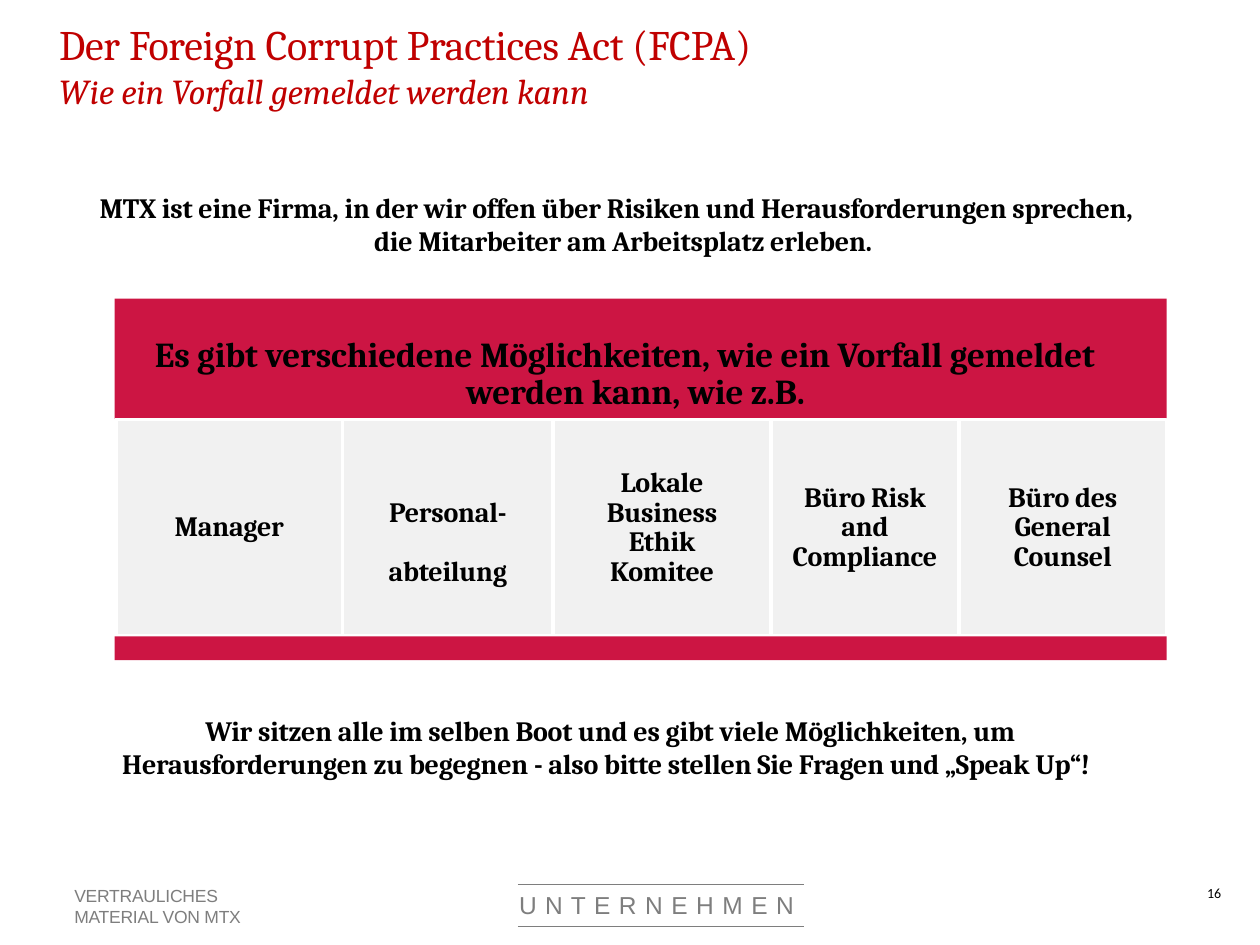
from dataclasses import dataclass

from pptx import Presentation
from pptx.dml.color import RGBColor
from pptx.enum.shapes import MSO_CONNECTOR, MSO_SHAPE
from pptx.enum.text import MSO_ANCHOR, PP_ALIGN
from pptx.oxml import parse_xml
from pptx.oxml.ns import nsdecls
from pptx.util import Inches, Pt

CENTER = PP_ALIGN.CENTER
MIDDLE = MSO_ANCHOR.MIDDLE
RECTANGLE = MSO_SHAPE.RECTANGLE
STRAIGHT = MSO_CONNECTOR.STRAIGHT


@dataclass(frozen=True)
class Theme:
    """Colours, fonts and type sizes of the slide."""
    title: str = "C00000"
    band: str = "CC1543"
    cell: str = "F1F1F1"
    white: str = "FFFFFF"
    ink: str = "000000"
    muted: str = "7E7E7E"
    serif: str = "Cambria"
    sans: str = "Arial"
    number: str = "Calibri"
    title_size: int = 24
    heading_size: int = 20
    body_size: int = 16
    mark_size: int = 14
    footer_size: int = 10
    number_size: int = 8


THEME = Theme()


def style(paragraph, size, color=THEME.ink, face=THEME.serif, bold=False, italic=False, spacing=-0.1):
    """Format every run of a paragraph."""
    for run in paragraph.runs:
        run.font.name = face
        run.font.size = Pt(size)
        run.font.bold = bold
        run.font.italic = italic
        run.font.color.rgb = RGBColor.from_string(color)
        run._r.get_or_add_rPr().set("spc", str(round(spacing * 100)))


def clear_insets(frame):
    """Remove the inner margins of a text frame and let it wrap."""
    frame.word_wrap = True
    frame.margin_left = frame.margin_right = frame.margin_top = frame.margin_bottom = 0


def add_text(slide, left, top, width, height, text, size, margin=0.01, indent=0, **look):
    """Place one paragraph with a left margin and first-line indent and return it."""
    box = slide.shapes.add_textbox(Inches(left), Inches(top), Inches(width), Inches(height))
    clear_insets(box.text_frame)
    paragraph = box.text_frame.paragraphs[0]
    paragraph.text = text
    properties = paragraph._p.get_or_add_pPr()
    properties.set("marL", str(Inches(margin)))
    properties.set("indent", str(Inches(indent)))
    style(paragraph, size, **look)
    return paragraph


def add_block(slide, left, top, width, height, fill):
    """Draw a plain filled rectangle and return it."""
    block = slide.shapes.add_shape(RECTANGLE, Inches(left), Inches(top), Inches(width), Inches(height))
    block.shadow.inherit = False
    block.fill.solid()
    block.fill.fore_color.rgb = RGBColor.from_string(fill)
    block.line.fill.background()
    return block


def add_title(slide, left, top, width, height):
    """Place the title with its italic second line."""
    title = add_text(slide, left, top + 0.02, width, height,
                     "Der Foreign Corrupt Practices Act (FCPA)\vWie ein Vorfall gemeldet werden kann",
                     THEME.title_size, color=THEME.title)
    subtitle = title.runs[1]
    subtitle.font.size = Pt(THEME.heading_size)
    subtitle.font.italic = True


def add_channel(slide, left, top, width, height, lines, paragraph_gap=0):
    """Draw one reporting channel, its paragraphs centred in the cell."""
    cell = add_block(slide, left, top, width, height, THEME.cell)
    cell.line.color.rgb = RGBColor.from_string(THEME.white)
    cell.line.width = Pt(2)
    frame = cell.text_frame
    clear_insets(frame)
    frame.margin_top = Pt(paragraph_gap)
    frame.vertical_anchor = MIDDLE
    frame.text = lines
    for index, paragraph in enumerate(frame.paragraphs):
        paragraph.alignment = CENTER
        paragraph.line_spacing = 0.88
        if index:
            paragraph.space_before = Pt(paragraph_gap)
        style(paragraph, THEME.body_size, bold=True)


def add_channels(slide, left, top, width, height):
    """Draw the red heading band, the row of channels and the closing bar."""
    row_top, row_height = top + 0.96, 1.72
    add_block(slide, left, top, width, 1.14, THEME.band)
    heading = add_text(slide, left - 0.18, top + 0.31, width + 0.18, 0.59,
                       "Es gibt verschiedene Möglichkeiten, wie ein Vorfall gemeldet\vwerden kann, wie z.B.",
                       THEME.heading_size, margin=2.97, indent=-2.47, bold=True)
    heading.line_spacing = Pt(21.1)
    channels = [
        (1.8, "Manager", 0),
        (1.67, "Personal-\nabteilung", 17),
        (1.73, "Lokale\vBusiness\vEthik\vKomitee", 0),
        (1.49, "Büro Risk\vand\vCompliance", 0),
        (1.65, "Büro des\vGeneral\vCounsel", 0),
    ]
    cell_left = left + 0.01
    for cell_width, lines, gap in channels:
        add_channel(slide, cell_left, row_top, cell_width, row_height, lines, gap)
        cell_left += cell_width
    bar_height = 0.19
    add_block(slide, left, top + height - bar_height, width, bar_height, THEME.band)


def add_footer(slide, left, top, width, height):
    """Place the confidentiality note, the ruled company mark and the slide number."""
    add_text(slide, left, top, 1.6, height, "VERTRAULICHES\vMATERIAL VON MTX",
             THEME.footer_size, color=THEME.muted, face=THEME.sans)
    mark_left, mark_width = left + 3.53, 2.27
    for rule_top in (top, top + 0.33):
        rule = slide.shapes.add_connector(STRAIGHT, Inches(mark_left), Inches(rule_top),
                                          Inches(mark_left + mark_width), Inches(rule_top))
        rule.line.color.rgb = RGBColor.from_string(THEME.muted)
        rule.line.width = Pt(0.5)
        rule._element.spPr.append(parse_xml(f"<a:effectLst {nsdecls('a')}/>"))
    mark = add_text(slide, mark_left, top + 0.05, mark_width + 0.1, 0.25, "U N T E R N E H M E N",
                    THEME.mark_size, color=THEME.muted, face=THEME.sans, spacing=0.48)
    mark.line_spacing = Pt(16.5)
    add_text(slide, left + width - 0.21, top, 0.21, 0.14, "16", THEME.number_size,
             margin=0, face=THEME.number, spacing=0)


def add_reporting_slide(deck):
    """Build the slide on how to report an incident."""
    slide = deck.slides.add_slide(deck.slide_layouts[6])
    add_title(slide, 0.46, 0.13, 7, 0.75)
    add_text(slide, 0.73, 1.51, 8.54, 0.56,
             "MTX ist eine Firma, in der wir offen über Risiken und Herausforderungen sprechen,\v"
             "die Mitarbeiter am Arbeitsplatz erleben.",
             THEME.body_size, margin=2.24, indent=-2.18, bold=True)
    add_channels(slide, 0.91, 2.37, 8.35, 2.87)
    add_text(slide, 0.96, 5.66, 8.01, 0.56,
             "Wir sitzen alle im selben Boot und es gibt viele Möglichkeiten, um\v"
             "Herausforderungen zu begegnen - also bitte stellen Sie Fragen und „Speak Up“!",
             THEME.body_size, indent=0.66, bold=True)
    add_footer(slide, 0.58, 7.02, 9.21, 0.35)


def main():
    """Create and save the deck."""
    deck = Presentation()
    deck.slide_width, deck.slide_height = Inches(10), Inches(7.5)
    add_reporting_slide(deck)
    deck.save("out.pptx")


if __name__ == "__main__":
    main()
